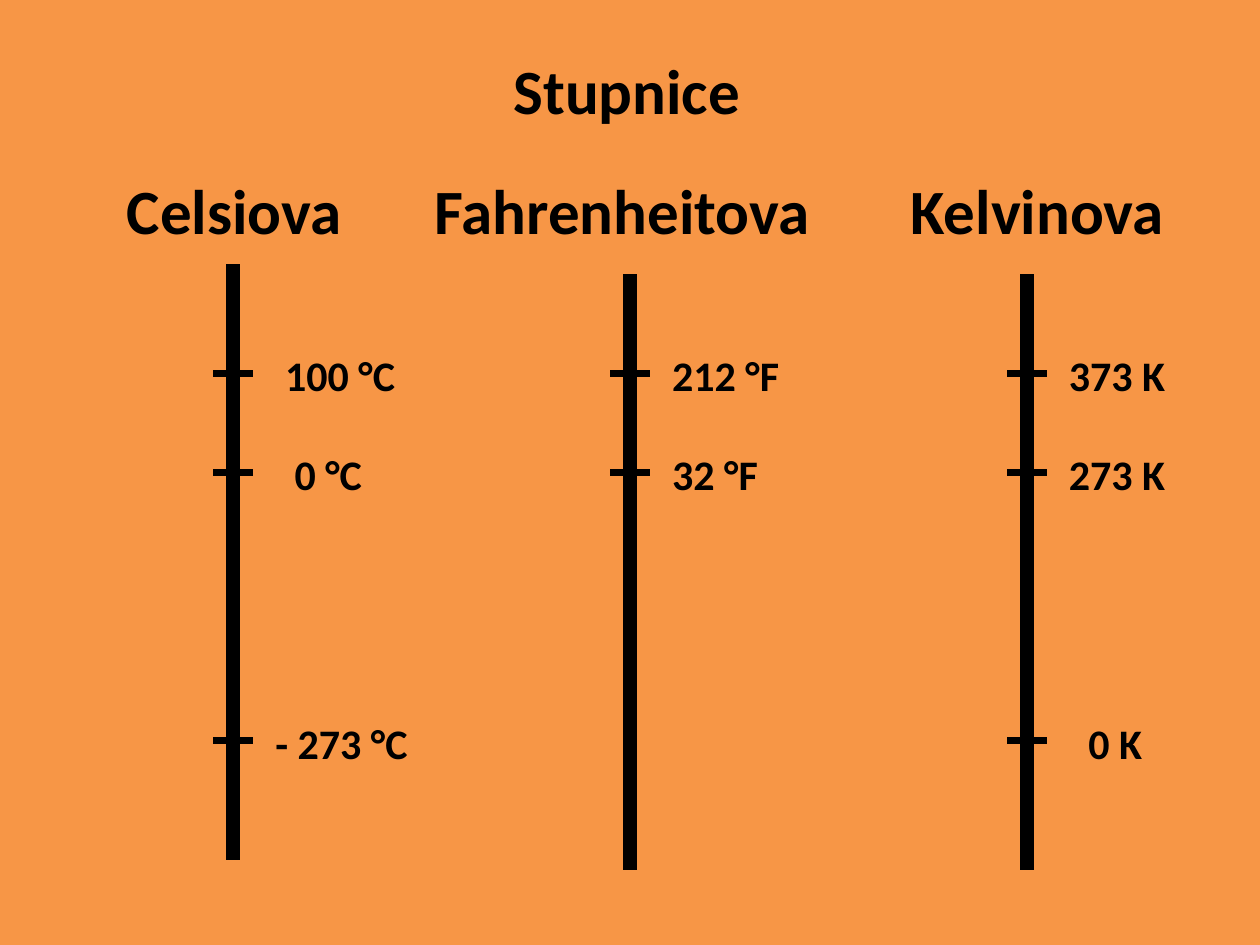
from pptx import Presentation
from pptx.dml.color import RGBColor
from pptx.enum.shapes import MSO_CONNECTOR
from pptx.enum.text import MSO_ANCHOR, MSO_AUTO_SIZE, PP_ALIGN
from pptx.oxml.ns import qn
from pptx.util import Cm, Pt
from lxml import etree

STRAIGHT = MSO_CONNECTOR.STRAIGHT
TOP = MSO_ANCHOR.TOP
FIT_SHAPE = MSO_AUTO_SIZE.SHAPE_TO_FIT_TEXT
LEFT = PP_ALIGN.LEFT

ORANGE = RGBColor(0xF7, 0x96, 0x46)
BLACK = RGBColor(0, 0, 0)
FONT = "Calibri"

# Lengths in centimetres
FIRST_AXIS_X, AXIS_STEP, AXIS_LENGTH = 4.7, 8, 12
TICK_HALF = 0.4
LABEL_RISE, LABEL_HEIGHT = 0.6, 1.27
HEADING_TOP, HEADING_HEIGHT = 3.33, 1.8
BOILING_Y, FREEZING_Y, ZERO_Y = 7.52, 9.52, 14.93

# Heading, its left and width, axis top,
# marks (height on the axis, label, label offset from the axis, label width)
SCALES = [
    ("Celsiova", 2.31, 4.9, 5.33, [
        (BOILING_Y, "100 °C", 0.8, 2.8),
        (FREEZING_Y, "0 °C", 0.99, 1.95),
        (ZERO_Y, "- 273 °C", 0.6, 3.25)]),
    ("Fahrenheitova", 8.51, 8.2, 5.53, [
        (BOILING_Y, "212 °F", 0.6, 2.75),
        (FREEZING_Y, "32 °F", 0.6, 2.35)]),
    ("Kelvinova", 18.11, 5.7, 5.53, [
        (BOILING_Y, "373 K", 0.6, 2.55),
        (FREEZING_Y, "273 K", 0.6, 2.55),
        (ZERO_Y, "0 K", 0.99, 1.7)]),
]


def add_line(slide, x1, y1, x2, y2, width):
    line = slide.shapes.add_connector(STRAIGHT, Cm(x1), Cm(y1), Cm(x2), Cm(y2))
    line.line.color.rgb = BLACK
    line.line.width = Pt(width)
    etree.SubElement(line._element.spPr, qn("a:effectLst"))


def write_text(shape, text, size):
    frame = shape.text_frame
    frame.text = text
    frame.word_wrap = False
    frame.auto_size = FIT_SHAPE
    frame.vertical_anchor = TOP
    paragraph = frame.paragraphs[0]
    paragraph.alignment = LEFT
    paragraph.font.name = FONT
    paragraph.font.size = Pt(size)
    paragraph.font.bold = True
    paragraph.font.color.rgb = BLACK


def add_label(slide, text, left, top, width, height, size):
    box = slide.shapes.add_textbox(Cm(left), Cm(top), Cm(width), Cm(height))
    write_text(box, text, size)


def set_title(slide, text):
    title = slide.shapes.title
    title.left, title.top = Cm(10.1), Cm(0.92)
    title.width, title.height = Cm(5.15), Cm(HEADING_HEIGHT)
    write_text(title, text, 36)


def add_scale(slide, x, heading, left, width, top, marks):
    add_label(slide, heading, left, HEADING_TOP, width, HEADING_HEIGHT, 36)
    add_line(slide, x, top, x, top + AXIS_LENGTH, 8)
    for y, text, offset, label_width in marks:
        add_line(slide, x - TICK_HALF, y, x + TICK_HALF, y, 4)
        add_label(slide, text, x + offset, y - LABEL_RISE,
                  label_width, LABEL_HEIGHT, 24)


def main():
    presentation = Presentation()
    presentation.slide_width, presentation.slide_height = Cm(25.4), Cm(19.05)
    slide = presentation.slides.add_slide(presentation.slide_layouts[5])
    slide.background.fill.solid()
    slide.background.fill.fore_color.rgb = ORANGE

    set_title(slide, "Stupnice")
    # One vertical thermometer scale per column
    for column, scale in enumerate(SCALES):
        add_scale(slide, FIRST_AXIS_X + column * AXIS_STEP, *scale)

    presentation.save("out.pptx")


if __name__ == "__main__":
    main()
